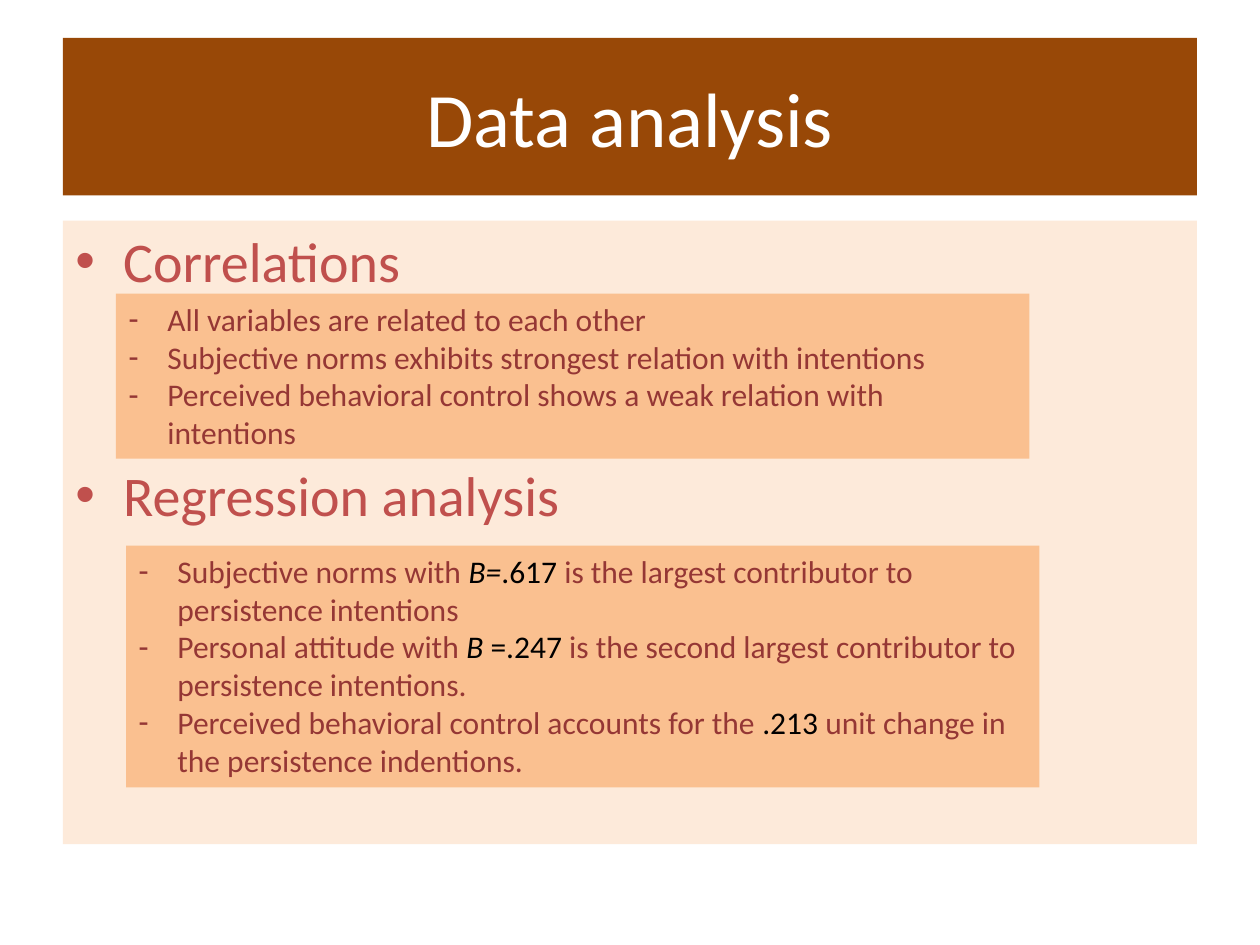
import dataclasses

import pptx
import pptx.dml.color
import pptx.enum.shapes
import pptx.enum.text
import pptx.oxml
import pptx.oxml.ns
import pptx.util

Inches = pptx.util.Inches
Pt = pptx.util.Pt


@dataclasses.dataclass(frozen=True)
class Theme:
    """Colours, font and type sizes of the slide."""

    font: str = "Calibri"
    banner: str = "984807"
    panel: str = "FDEADA"
    findings: str = "FAC090"
    title: str = "FFFFFF"
    heading: str = "C0504D"
    finding: str = "953735"
    value: str = "000000"
    title_size: int = 44
    heading_size: int = 32
    finding_size: int = 18


THEME = Theme()

HEADINGS = ["Correlations", "Regression analysis"]

CORRELATIONS = [
    [("All variables are related to each other", {})],
    [("Subjective norms exhibits strongest relation with intentions", {})],
    [("Perceived behavioral control shows a weak relation with intentions", {})],
]

VALUE = {"color": THEME.value}
SYMBOL = {"color": THEME.value, "italic": True}

REGRESSION = [
    [
        ("Subjective norms with ", {}),
        ("B=", SYMBOL),
        (".617 ", VALUE),
        ("is the largest contributor to persistence intentions", {}),
    ],
    [
        ("Personal attitude with ", {}),
        ("B", SYMBOL),
        (" =.247 ", VALUE),
        ("is the second largest contributor to persistence intentions.", {}),
    ],
    [
        ("Perceived behavioral control accounts for the ", {}),
        (".213 ", VALUE),
        ("unit change in the persistence indentions.", {}),
    ],
]


def add_block(page, box, fill, anchor=pptx.enum.text.MSO_ANCHOR.TOP):
    """Add a filled rectangle at box and return its text frame."""
    block = page.shapes.add_shape(
        pptx.enum.shapes.MSO_SHAPE.RECTANGLE, *(Inches(length) for length in box)
    )
    block.shadow.inherit = False
    block.fill.solid()
    block.fill.fore_color.rgb = pptx.dml.color.RGBColor.from_string(fill)
    block.line.fill.background()
    frame = block.text_frame
    frame.word_wrap = True
    frame.vertical_anchor = anchor
    return frame


def add_span(para, text, size, color, italic=False):
    """Append formatted text to a paragraph."""
    span = para.add_run()
    span.text = text
    span.font.name = THEME.font
    span.font.size = Pt(size)
    span.font.italic = italic
    span.font.color.rgb = pptx.dml.color.RGBColor.from_string(color)


def set_bullet(para, mark, indent):
    """Give a paragraph a bullet mark with a hanging indent."""
    properties = para._p.get_or_add_pPr()
    properties.set("marL", str(Inches(indent)))
    properties.set("indent", str(-Inches(indent)))
    for tag, name, value in (("a:buFont", "typeface", "Arial"), ("a:buChar", "char", mark)):
        element = pptx.oxml.parse_xml(f"<{tag} {pptx.oxml.ns.nsdecls('a')}/>")
        element.set(name, value)
        properties.append(element)


def add_list(frame, items, mark, indent, size, color, gap=0):
    """Fill a frame with bulleted items, gap points apart."""
    for index, spans in enumerate(items):
        para = frame.add_paragraph() if index else frame.paragraphs[0]
        para.alignment = pptx.enum.text.PP_ALIGN.LEFT
        para.space_before = Pt(gap if index else 0)
        set_bullet(para, mark, indent)
        for text, style in spans:
            add_span(para, text, **{"size": size, "color": color, **style})


def add_title(page, box, text):
    """Place the title banner."""
    frame = add_block(page, box, THEME.banner, pptx.enum.text.MSO_ANCHOR.MIDDLE)
    para = frame.paragraphs[0]
    para.alignment = pptx.enum.text.PP_ALIGN.CENTER
    add_span(para, text, THEME.title_size, THEME.title)


def add_headings(page, box, headings):
    """Place the panel whose headings leave room for the findings."""
    frame = add_block(page, box, THEME.panel)
    items = [[(heading, {})] for heading in headings]
    add_list(frame, items, "•", 0.38, THEME.heading_size, THEME.heading, gap=95)


def add_findings(page, box, findings):
    """Place one box of dashed findings."""
    frame = add_block(page, box, THEME.findings)
    add_list(frame, findings, "-", 0.31, THEME.finding_size, THEME.finding)


def main():
    """Build the data analysis slide and save it."""
    deck = pptx.Presentation()
    deck.slide_width, deck.slide_height = Inches(10), Inches(7.5)
    page = deck.slides.add_slide(deck.slide_layouts[6])
    add_headings(page, (0.5, 1.75, 9, 4.95), HEADINGS)
    add_title(page, (0.5, 0.3, 9, 1.25), "Data analysis")
    add_findings(page, (0.92, 2.33, 7.25, 1.31), CORRELATIONS)
    add_findings(page, (1, 4.33, 7.25, 1.92), REGRESSION)
    deck.save("out.pptx")


if __name__ == "__main__":
    main()
